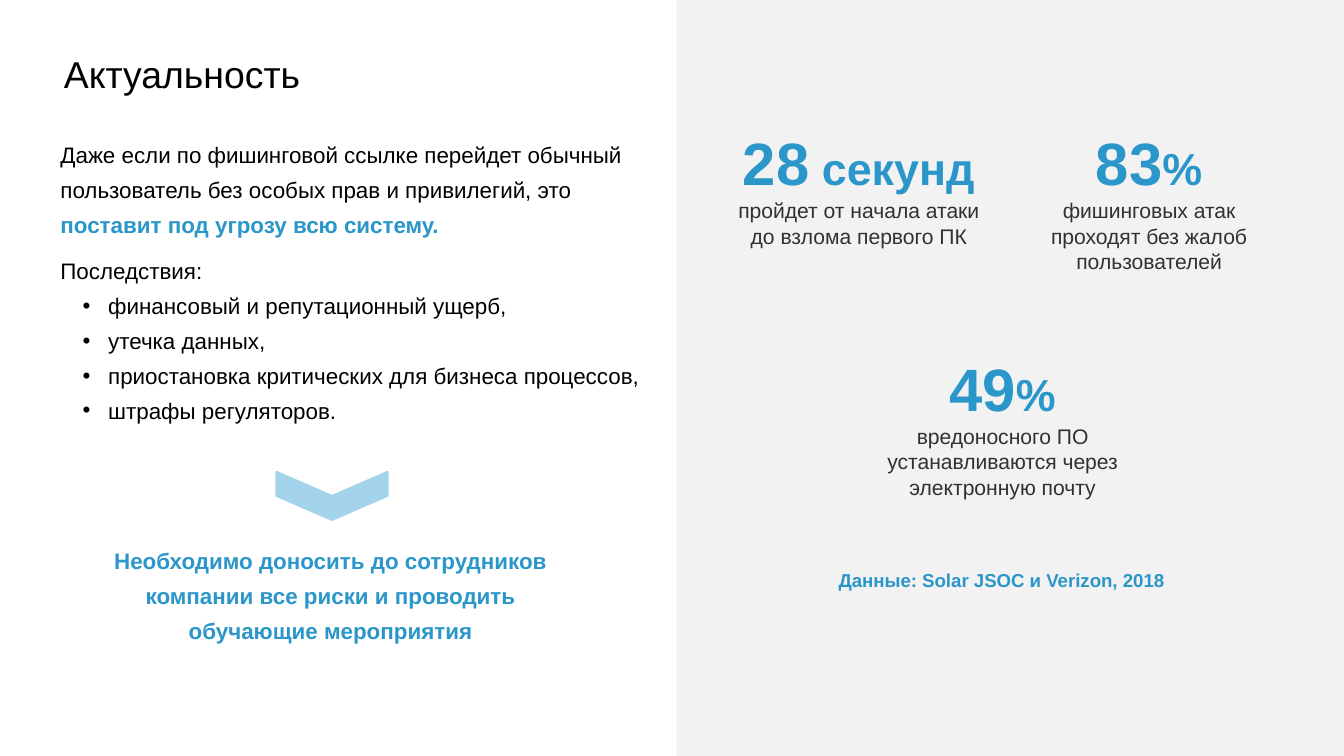
"""Build the slide on why phishing awareness matters."""
from copy import deepcopy
from dataclasses import dataclass

from lxml import etree
from pptx import Presentation
from pptx.dml.color import RGBColor
from pptx.enum.shapes import MSO_SHAPE
from pptx.enum.text import PP_ALIGN
from pptx.oxml.ns import qn
from pptx.shapes.autoshape import Shape
from pptx.slide import Slide
from pptx.util import Emu, Pt

EMU_PER_PX = 4572
LEFT, CENTER = PP_ALIGN.LEFT, PP_ALIGN.CENTER
RECTANGLE, CHEVRON = MSO_SHAPE.RECTANGLE, MSO_SHAPE.CHEVRON


@dataclass(frozen=True)
class Theme:
    font: str = "Arial"
    ink: str = "000000"
    caption: str = "313131"
    accent: str = "2A96C9"
    arrow: str = "A3D4EC"
    panel: str = "F2F2F2"
    title_size: float = 20
    body_size: float = 12
    figure_size: float = 32
    unit_size: float = 24
    caption_size: float = 11.25
    source_size: float = 10


@dataclass(frozen=True)
class Box:
    left: int
    top: int
    width: int
    height: int


@dataclass(frozen=True)
class Statistic:
    box: Box
    figure: str
    unit: str
    captions: tuple[str, ...]


THEME = Theme()
SLIDE_WIDTH, SLIDE_HEIGHT = 2000, 1125
PANEL = Box(1007, 0, 993, SLIDE_HEIGHT)
ARROW = Box(458, 655, 72, 166)
TITLE_BOX = Box(95, 74, 1798, 82)
BODY_BOX = Box(74, 178, 908, 770)
CONCLUSION_BOX = Box(104, 793, 776, 174)
SOURCE_BOX = Box(1225, 837, 530, 54)
CONSEQUENCES = (
    "финансовый и репутационный ущерб,",
    "утечка данных,",
    "приостановка критических для бизнеса процессов,",
    "штрафы регуляторов.",
)
STATISTICS = (
    Statistic(Box(1062, 178, 432, 204), "28", " секунд",
              ("пройдет от начала атаки\nдо взлома первого ПК",)),
    Statistic(Box(1494, 178, 432, 242), "83", "%",
              ("фишинговых атак", "проходят без жалоб", "пользователей")),
    Statistic(Box(1276, 514, 432, 242), "49", "%",
              ("вредоносного ПО устанавливаются через электронную почту",)),
)


def px(length: int) -> Emu:
    return Emu(length * EMU_PER_PX)


def place(box: Box) -> tuple[Emu, Emu, Emu, Emu]:
    return px(box.left), px(box.top), px(box.width), px(box.height)


def add_block(slide: Slide, kind: MSO_SHAPE, box: Box, color: str) -> Shape:
    shape = slide.shapes.add_shape(kind, *place(box))
    shape.shadow.inherit = False
    shape.fill.solid()
    shape.fill.fore_color.rgb = RGBColor.from_string(color)
    shape.line.fill.background()
    return shape


def add_text_box(slide: Slide, box: Box, *, left: int = 20, top: int = 10, wrap: bool = True) -> Shape:
    shape = slide.shapes.add_textbox(*place(box))
    frame = shape.text_frame
    frame.word_wrap = wrap
    frame.margin_left, frame.margin_top = px(left), px(top)
    frame.margin_right, frame.margin_bottom = px(20), px(10)
    return shape


def write(shape: Shape, text: str, *, size: float, color: str, bold: bool = False,
          align: PP_ALIGN = LEFT, spacing: float = 1.0, before: int = 0,
          margin: int = 0, indent: int = 0, bullet: str = "", append: bool = False) -> None:
    frame = shape.text_frame
    paragraph = frame.paragraphs[-1]
    if not append:
        if paragraph.runs:
            paragraph = frame.add_paragraph()
        paragraph.alignment = align
        paragraph.line_spacing = spacing
        paragraph.space_before = Pt(before)
        properties = paragraph._p.get_or_add_pPr()
        properties.set("marL", str(px(margin)))
        properties.set("indent", str(px(indent)))
        if bullet:
            etree.SubElement(properties, qn("a:buFont"), typeface=THEME.font)
            etree.SubElement(properties, qn("a:buChar"), char=bullet)
    for number, line in enumerate(text.split("\n")):
        if number:
            paragraph.add_line_break()
            paragraph._p[-1].append(deepcopy(run._r.rPr))
        run = paragraph.add_run()
        run.text = line
        run.font.name = THEME.font
        run.font.size = Pt(size)
        run.font.bold = bold
        run.font.color.rgb = RGBColor.from_string(color)


def add_body(slide: Slide) -> None:
    body = add_text_box(slide, BODY_BOX, left=0, top=20)
    plain = {"size": THEME.body_size, "color": THEME.ink, "spacing": 1.3}
    write(body, "Даже если по фишинговой ссылке перейдет обычный "
                "пользователь без особых прав и привилегий, это ", margin=16, **plain)
    write(body, "поставит под угрозу всю систему.", size=THEME.body_size,
          color=THEME.accent, bold=True, append=True)
    write(body, "Последствия:", margin=16, before=6, **plain)
    for consequence in CONSEQUENCES:
        write(body, consequence, margin=87, indent=-38, bullet="•", **plain)


def add_statistic(slide: Slide, statistic: Statistic) -> None:
    shape = add_text_box(slide, statistic.box)
    write(shape, statistic.figure, size=THEME.figure_size, color=THEME.accent, bold=True, align=CENTER)
    write(shape, statistic.unit, size=THEME.unit_size, color=THEME.accent, bold=True, append=True)
    for caption in statistic.captions:
        write(shape, caption, size=THEME.caption_size, color=THEME.caption, align=CENTER)


def main() -> None:
    presentation = Presentation()
    presentation.slide_width, presentation.slide_height = px(SLIDE_WIDTH), px(SLIDE_HEIGHT)
    slide = presentation.slides.add_slide(presentation.slide_layouts[6])

    add_block(slide, RECTANGLE, PANEL, THEME.panel)
    add_body(slide)
    title = add_text_box(slide, TITLE_BOX, left=0)
    write(title, "Актуальность", size=THEME.title_size, color=THEME.ink, spacing=0.9)
    for statistic in STATISTICS:
        add_statistic(slide, statistic)

    source = add_text_box(slide, SOURCE_BOX, wrap=False)
    write(source, "Данные: Solar JSOC и Verizon, 2018", size=THEME.source_size,
          color=THEME.accent, bold=True, align=CENTER)

    arrow = add_block(slide, CHEVRON, ARROW, THEME.arrow)
    arrow.rotation = 90
    arrow.line.color.rgb = RGBColor.from_string(THEME.arrow)
    arrow.line.width = Pt(1)

    conclusion = add_text_box(slide, CONCLUSION_BOX)
    write(conclusion, "Необходимо доносить до сотрудников компании все риски "
                      "и проводить обучающие мероприятия",
          size=THEME.body_size, color=THEME.accent, bold=True, align=CENTER, spacing=1.3)
    presentation.save("out.pptx")


if __name__ == "__main__":
    main()
